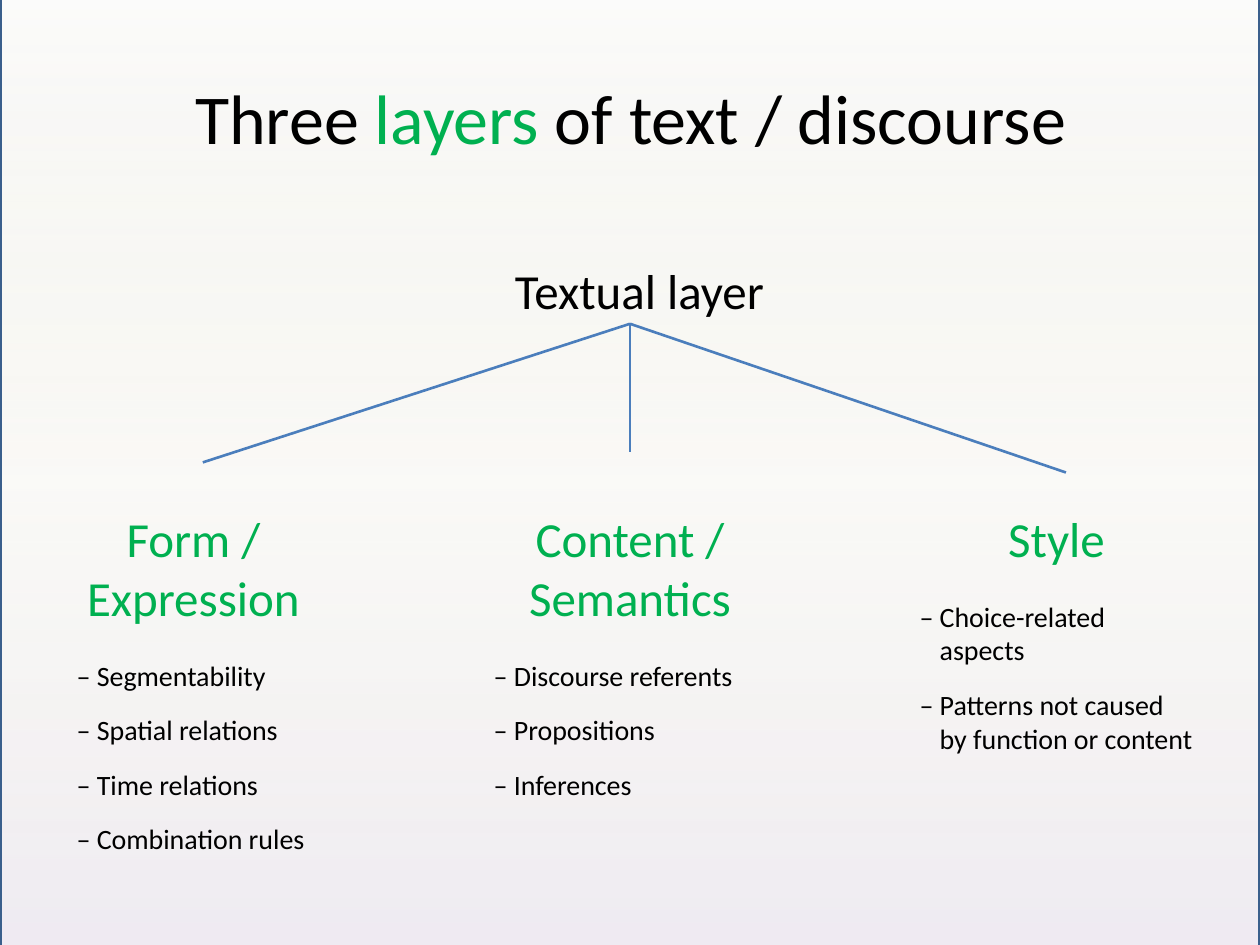
"""Build the slide on the three layers of text and discourse."""
from dataclasses import dataclass

import pptx
import pptx.dml.color
import pptx.enum.shapes
import pptx.enum.text
import pptx.oxml
import pptx.oxml.ns
import pptx.shapes.autoshape
import pptx.slide
import pptx.util
from pptx.util import Inches

FONT = "Calibri"
BLACK = "000000"
GREEN = "00B050"
BRANCH_BLUE = "4B7EBC"
FRAME_BLUE = "3A5F8C"
BACKDROP_STOPS = [(0, "F2F2F2", 30), (50, "C4BD97", 7), (100, "B3A2C7", 22)]
BRANCH_ROOT = (5, 2.57)


@dataclass
class Layer:
    """A sub-layer: its heading, its aspects, its place and its branch end."""
    heading: str
    aspects: list[str]
    left: float
    width: float
    height: float
    hanging: float
    branch_end: tuple[float, float]


LAYERS = [
    Layer("Form / Expression",
          ["Segmentability", "Spatial relations", "Time relations", "Combination rules"],
          0.51, 2.05, 2.99, 0.38, (1.61, 3.67)),
    Layer("Content / Semantics",
          ["Discourse referents", "Propositions", "Inferences"],
          3.82, 2.36, 2.44, 0.38, (5, 3.59)),
    Layer("Style",
          ["Choice-related aspects", "Patterns not caused by function or content"],
          7.2, 2.37, 2.44, 0.16, (8.46, 3.75)),
]


def color(value: str) -> pptx.dml.color.RGBColor:
    """Turn a hex string into a colour."""
    return pptx.dml.color.RGBColor.from_string(value)


def style_run(run, size: float, value: str) -> None:
    """Set the font, size and colour of a run."""
    run.font.name = FONT
    run.font.size = pptx.util.Pt(size)
    run.font.color.rgb = color(value)


def style_paragraph(paragraph, size: float, value: str, after: float,
                    hanging: float | None = None) -> None:
    """Format a paragraph: hanging if an indent is given, else centred."""
    paragraph.space_before = pptx.util.Pt(6)
    paragraph.space_after = pptx.util.Pt(after)
    if hanging is None:
        paragraph.alignment = pptx.enum.text.PP_ALIGN.CENTER
    else:
        properties = paragraph._p.get_or_add_pPr()
        properties.set("marL", str(Inches(hanging)))
        properties.set("indent", str(Inches(-hanging)))
    for run in paragraph.runs:
        style_run(run, size, value)


def add_text_frame(slide: pptx.slide.Slide, left: float, top: float,
                   width: float, height: float):
    """Add a wrapping text box and return its text frame."""
    frame = slide.shapes.add_textbox(
        Inches(left), Inches(top), Inches(width), Inches(height)).text_frame
    frame.word_wrap = True
    return frame


def add_backdrop(slide: pptx.slide.Slide) -> None:
    """Draw the framed rectangle with its translucent vertical gradient."""
    backdrop = slide.shapes.add_shape(
        pptx.enum.shapes.MSO_SHAPE.RECTANGLE,
        Inches(0), Inches(-0.03), Inches(10), Inches(7.69))
    backdrop.shadow.inherit = False
    backdrop.line.color.rgb = color(FRAME_BLUE)
    backdrop.line.width = pptx.util.Pt(2)
    backdrop.fill.gradient()
    backdrop.fill.gradient_angle = 270
    stops = backdrop._element.spPr.find(".//" + pptx.oxml.ns.qn("a:gsLst"))
    for stop in list(stops):
        stops.remove(stop)
    for position, value, opacity in BACKDROP_STOPS:
        stops.append(pptx.oxml.parse_xml(
            f'<a:gs {pptx.oxml.ns.nsdecls("a")} pos="{position * 1000}">'
            f'<a:srgbClr val="{value}"><a:alpha val="{opacity * 1000}"/></a:srgbClr></a:gs>'))


def add_title(slide: pptx.slide.Slide) -> None:
    """Write the title with its highlighted word."""
    frame = add_text_frame(slide, 1.14, 0.3, 7.73, 1.25)
    frame.vertical_anchor = pptx.enum.text.MSO_ANCHOR.MIDDLE
    title = frame.paragraphs[0]
    title.alignment = pptx.enum.text.PP_ALIGN.CENTER
    for words, value in [("Three ", BLACK), ("layers ", GREEN), ("of text / discourse", BLACK)]:
        run = title.add_run()
        run.text = words
        style_run(run, 40, value)


def add_root(slide: pptx.slide.Slide) -> None:
    """Write the label at the top of the tree."""
    frame = add_text_frame(slide, 3.58, 2.02, 2.99, 0.63)
    frame.text = "Textual layer"
    style_paragraph(frame.paragraphs[0], 28, BLACK, 18)


def add_layer(slide: pptx.slide.Slide, layer: Layer) -> None:
    """Write one layer's heading and aspects."""
    frame = add_text_frame(slide, layer.left, 3.99, layer.width, layer.height)
    frame.text = "\n".join([layer.heading] + [f"– {aspect}" for aspect in layer.aspects])
    heading, *aspects = frame.paragraphs
    style_paragraph(heading, 28, GREEN, 12)
    for aspect in aspects:
        style_paragraph(aspect, 16, BLACK, 6, layer.hanging)


def add_branch(slide: pptx.slide.Slide, end: tuple[float, float]) -> None:
    """Draw a line from the root of the tree to a layer."""
    branch = slide.shapes.add_connector(
        pptx.enum.shapes.MSO_CONNECTOR.STRAIGHT,
        *(Inches(value) for value in BRANCH_ROOT + end))
    branch.line.color.rgb = color(BRANCH_BLUE)
    branch.line.width = pptx.util.Pt(1.5)
    branch._element.spPr.append(pptx.oxml.parse_xml(
        f'<a:effectLst {pptx.oxml.ns.nsdecls("a")}/>'))


def main() -> None:
    """Build and save the slide."""
    deck = pptx.Presentation()
    deck.slide_width = Inches(10)
    deck.slide_height = Inches(7.5)
    slide = deck.slides.add_slide(deck.slide_layouts[6])
    add_backdrop(slide)
    add_title(slide)
    add_root(slide)
    for layer in LAYERS:
        add_layer(slide, layer)
        add_branch(slide, layer.branch_end)
    deck.save("out.pptx")


if __name__ == "__main__":
    main()
